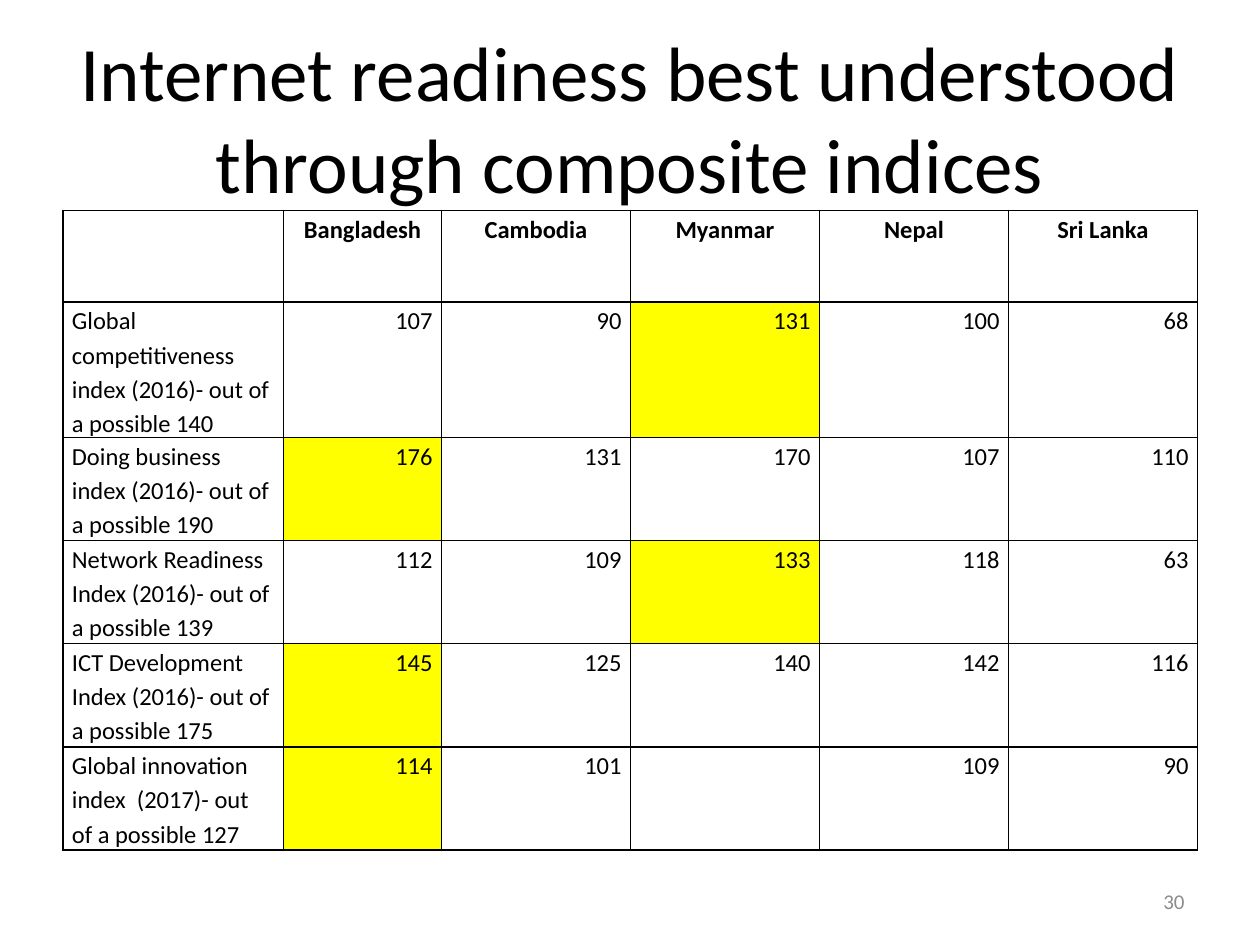
from pptx import Presentation
from pptx.dml.color import RGBColor as RGB
from pptx.enum.text import MSO_ANCHOR as Anchor, PP_ALIGN as Align
from pptx.oxml import parse_xml
from pptx.oxml.ns import nsdecls
from pptx.util import Cm, Pt

COLORS = {"text": "000000", "border": "000000", "highlight": "FFFF00", "number": "8C8C8C"}

COUNTRIES = ["Bangladesh", "Cambodia", "Myanmar", "Nepal", "Sri Lanka"]
INDICES = [
    ("Global competitiveness index (2016)- out of a possible 140", [107, 90, 131, 100, 68]),
    ("Doing business index (2016)- out of a possible 190", [176, 131, 170, 107, 110]),
    ("Network Readiness Index (2016)- out of a possible 139", [112, 109, 133, 118, 63]),
    ("ICT Development Index (2016)- out of a possible 175", [145, 125, 140, 142, 116]),
    ("Global innovation index  (2017)- out of a possible 127", [114, 101, None, 109, 90]),
]


class SlideBuilder:
    font = "Calibri"

    def __init__(self, slide):
        self.s = slide

    def style(self, p, size, color, align, bold=False):
        p.alignment = align
        p.font.name = self.font
        p.font.size = Pt(size)
        p.font.bold = bold
        p.font.color.rgb = RGB.from_string(COLORS[color])

    def text(self, box, text, size, color, align):
        tf = self.s.shapes.add_textbox(*map(Cm, box)).text_frame
        tf.word_wrap = True
        tf.vertical_anchor = Anchor.MIDDLE
        p = tf.paragraphs[0]
        p.text = text
        self.style(p, size, color, align)

    def cell(self, cell, text, align, bold=False, highlight=False):
        cell.margin_left = cell.margin_right = Cm(0.18)
        cell.margin_top = cell.margin_bottom = 0
        tc_pr = cell._tc.get_or_add_tcPr()
        for side in "LRTB":
            tc_pr.append(parse_xml(
                f'<a:ln{side} {nsdecls("a")} w="{Pt(1)}"><a:solidFill>'
                f'<a:srgbClr val="{COLORS["border"]}"/></a:solidFill></a:ln{side}>'))
        if highlight:
            cell.fill.solid()
            cell.fill.fore_color.rgb = RGB.from_string(COLORS["highlight"])
        else:
            cell.fill.background()
        p = cell.text_frame.paragraphs[0]
        p.text = text
        p.line_spacing = 1.15
        self.style(p, 14, "text", align, bold)

    def table(self, left, top, widths, heights, header, rows):
        table = self.s.shapes.add_table(
            len(heights), len(widths), Cm(left), Cm(top),
            Cm(sum(widths)), Cm(sum(heights))).table
        table.first_row = table.horz_banding = False
        for column, width in zip(table.columns, widths):
            column.width = Cm(width)
        for row, height in zip(table.rows, heights):
            row.height = Cm(height)
        for c, name in enumerate([""] + header):
            self.cell(table.cell(0, c), name, Align.CENTER, bold=True)
        for r, (label, ranks) in enumerate(rows, 1):
            self.cell(table.cell(r, 0), label, Align.LEFT)
            # The worst rank in each row is highlighted
            worst = max(rank for rank in ranks if rank is not None)
            for c, rank in enumerate(ranks, 1):
                text = "" if rank is None else str(rank)
                self.cell(table.cell(r, c), text, Align.RIGHT, highlight=rank == worst)


def main():
    prs = Presentation()
    prs.slide_width, prs.slide_height = Cm(25.4), Cm(19.05)
    builder = SlideBuilder(prs.slides.add_slide(prs.slide_layouts[6]))

    # Title
    builder.text((1.27, 0.76, 22.86, 3.18),
                 "Internet readiness best understood through composite indices",
                 44, "text", Align.CENTER)

    # Country ranks by index
    builder.table(1.27, 4.24, [4.45, 3.18] + [3.81] * 4, [1.85] + [2.08] * 5,
                  COUNTRIES, INDICES)

    # Slide number
    builder.text((18.2, 17.66, 5.93, 1.01), "30", 12, "number", Align.RIGHT)

    prs.save("out.pptx")


if __name__ == "__main__":
    main()
